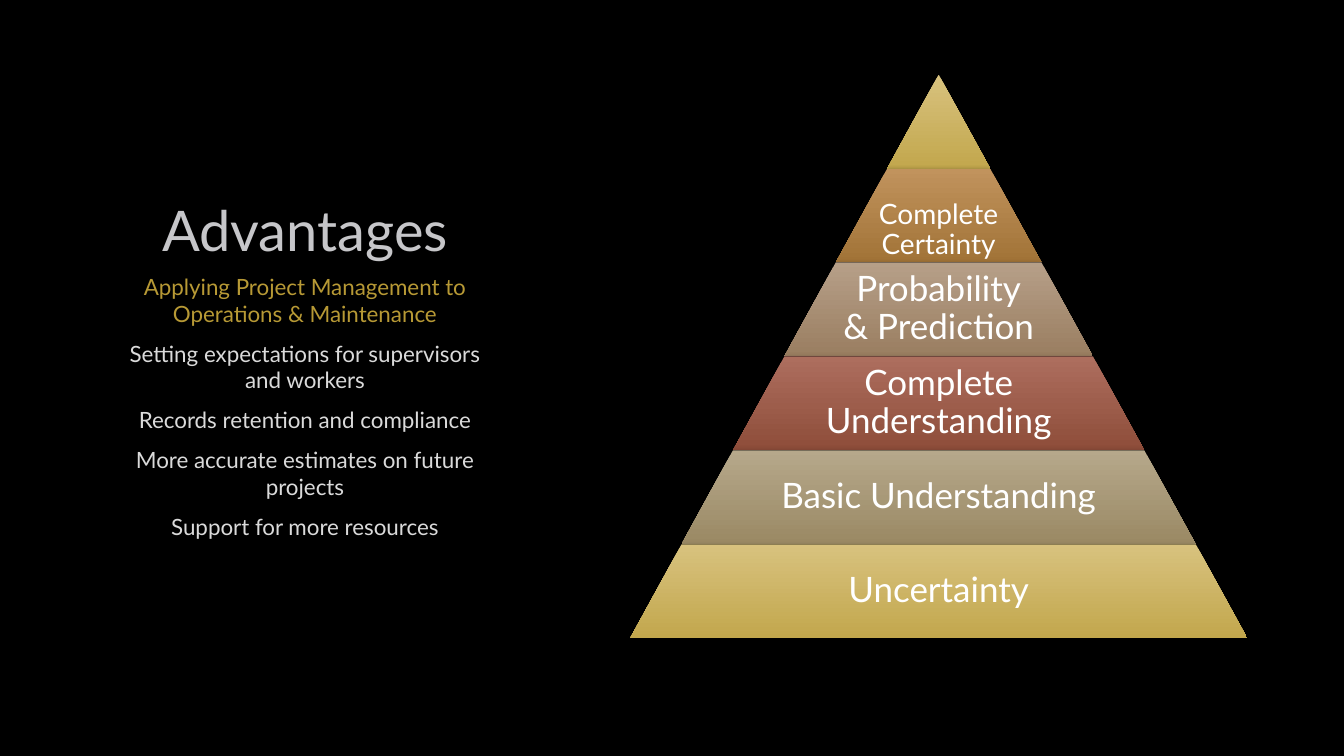
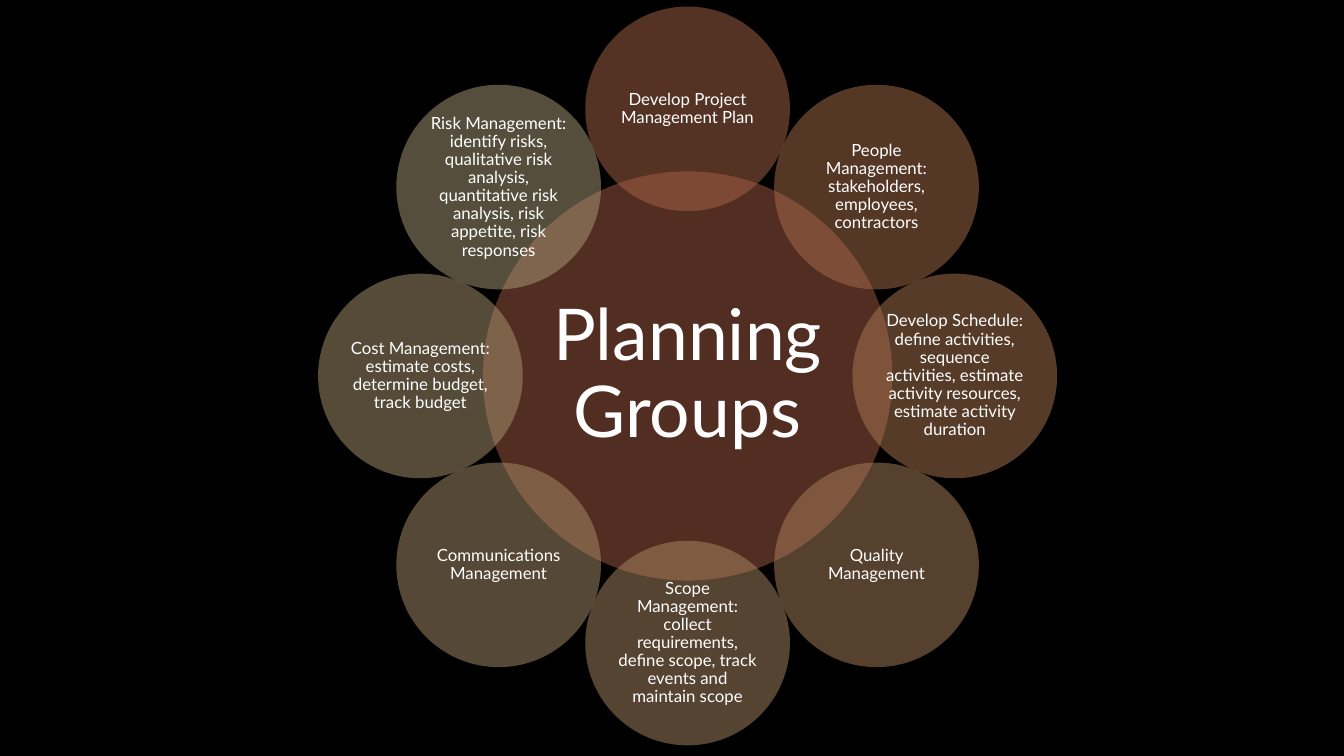
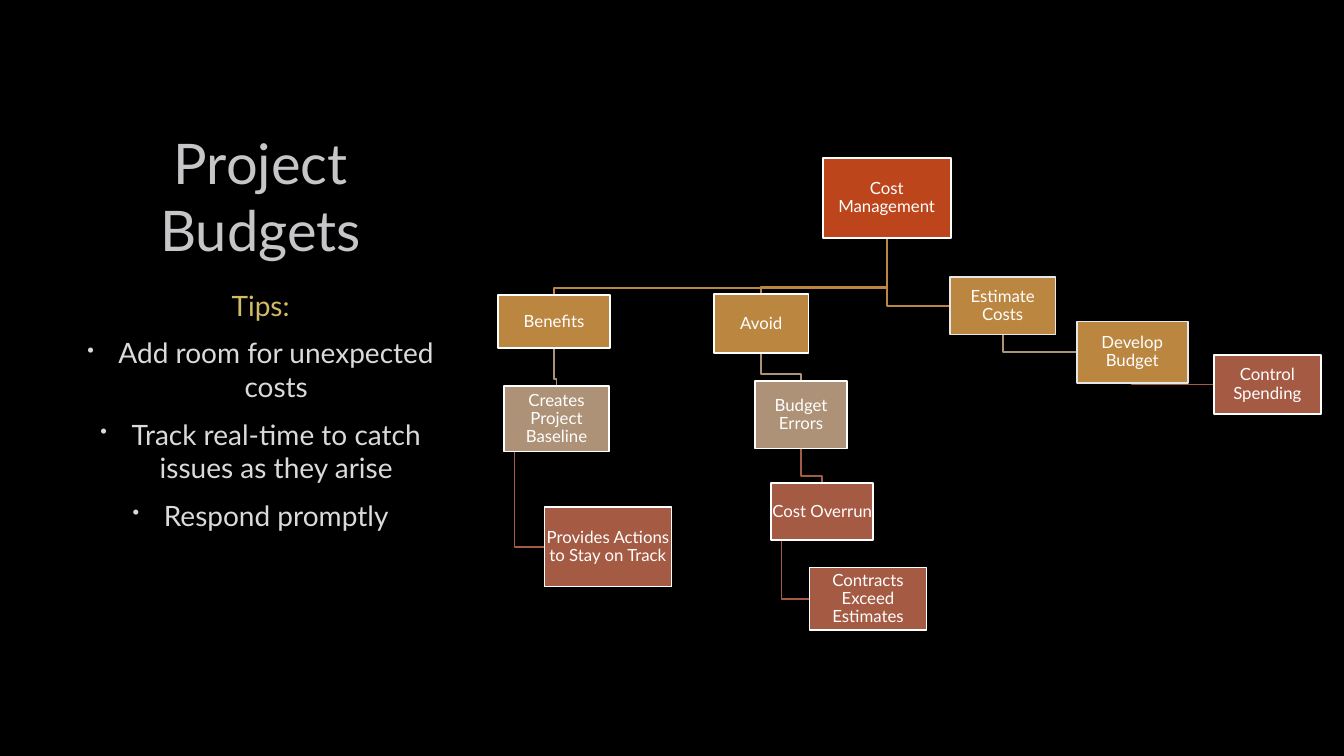
from dataclasses import dataclass
from math import cos, pi, sin

from lxml.etree import SubElement
from pptx import Presentation
from pptx.dml.color import RGBColor
from pptx.enum.shapes import MSO_SHAPE as SHAPE
from pptx.enum.text import MSO_ANCHOR as ANCHOR, MSO_AUTO_SIZE as AUTO, PP_ALIGN as ALIGN
from pptx.oxml.ns import qn
from pptx.util import Inches, Pt


@dataclass(frozen=True)
class Theme:
    font: str = "Lato"
    back: str = "000000"
    title: str = "C6C6C9"
    body: str = "DADADA"
    accent: str = "B79935"
    tips: str = "D3BA68"
    white: str = "FFFFFF"
    pale: str = "E7E7E7"
    root: str = "BC451B"
    amber: str = "BB8640"
    tan: str = "AD9277"
    rust: str = "A55A43"
    gold_fade: tuple = ("D8C27E", "C2A74D")
    amber_fade: tuple = ("C1935D", "A17337")
    tan_fade: tuple = ("B69F88", "9A7E61")
    rust_fade: tuple = ("AD6E5E", "8E4D3A")
    olive_fade: tuple = ("B6A88B", "9A8964")
    orbit: tuple = ("A86448", "AB6E4D", "AD7753", "AC815C",
                    "AC8964", "AC906C", "AD9773", "AD9D7B")
    title_size: int = 40
    hub_size: int = 51
    tier_size: int = 25
    body_size: int = 20
    small_body_size: int = 16
    label_size: int = 12
    line_width: float = 1.25


T = Theme()
TITLE_ONLY, BLANK = 5, 6


def rgb(value):
    return RGBColor.from_string(value)


def add_xml(parent, tag, **attrs):
    return SubElement(parent, qn(tag), {k: str(v) for k, v in attrs.items()})


class Deck:
    def __init__(self):
        self.prs = Presentation()
        self.prs.slide_width, self.prs.slide_height = Inches(13.33), Inches(7.5)
        fill = self.prs.slide_master.background.fill
        fill.solid()
        fill.fore_color.rgb = rgb(T.back)
        self.s = None

    def new_slide(self, layout):
        self.s = self.prs.slides.add_slide(self.prs.slide_layouts[layout])

    def style(self, p, size, color):
        p.alignment = ALIGN.CENTER
        for r in p.runs:
            r.font.name, r.font.size = T.font, Pt(size)
            r.font.color.rgb = rgb(color)

    def title(self, text, x):
        sp = self.s.shapes.title
        sp.left, sp.top, sp.width, sp.height = map(Inches, (x, 0.67, 4.05, 1.99))
        tf = sp.text_frame
        tf.text = text
        tf.auto_size, tf.vertical_anchor = AUTO.NONE, ANCHOR.BOTTOM
        self.style(tf.paragraphs[0], T.title_size, T.title)

    def body(self, x, y, heading, lines, size, heading_color, bullets=False):
        box = self.s.shapes.add_textbox(*map(Inches, (x, y, 4.05, 3.67)))
        tf = box.text_frame
        tf.word_wrap = True
        for i, text in enumerate([heading, *lines]):
            p = tf.add_paragraph() if i else tf.paragraphs[0]
            p.text = text
            p.space_before, p.space_after = Pt(size * 0.2), Pt(6)
            self.style(p, size, T.body if i else heading_color)
            if bullets and i:
                self.bullet(p)

    def bullet(self, p):
        pr = p._p.get_or_add_pPr()
        indent = Inches(0.31)
        pr.set("marL", str(indent))
        pr.set("indent", str(-indent))
        add_xml(add_xml(pr, "a:buClr"), "a:srgbClr", val=T.body)
        add_xml(pr, "a:buSzPct", val=70000)
        add_xml(pr, "a:buChar", char="•")

    def put_text(self, sp, text, size, inset):
        tf = sp.text_frame
        tf.word_wrap, tf.vertical_anchor = True, ANCHOR.MIDDLE
        tf.margin_left = tf.margin_right = Inches(inset)
        tf.margin_top = tf.margin_bottom = Inches(inset)
        p = tf.paragraphs[0]
        p.text = text
        p.line_spacing = 0.9
        self.style(p, size, T.white)

    def label(self, at, text, size):
        self.put_text(self.s.shapes.add_textbox(*map(Inches, at)), text, size, 0.03)

    def tier(self, at, fade):
        """Trapezoid with a vertical gradient and a soft shadow below."""
        sp = self.s.shapes.add_shape(SHAPE.TRAPEZOID, *map(Inches, at))
        sp.adjustments[0] = 0.547
        sp.line.fill.background()
        sp.fill.gradient()
        sp.fill.gradient_angle = 270
        for stop, color, position in zip(sp.fill.gradient_stops, fade, (0, 1)):
            stop.color.rgb, stop.position = rgb(color), position
        sp.shadow.inherit = False
        shadow = add_xml(sp.element.spPr.find(qn("a:effectLst")), "a:outerShdw",
                         blurRad=Pt(5), dist=Pt(2), dir=5400000, rotWithShape=0)
        add_xml(add_xml(shadow, "a:srgbClr", val="000000"), "a:alpha", val=60000)

    def solid(self, kind, at, color):
        sp = self.s.shapes.add_shape(kind, *map(Inches, at))
        sp.shadow.inherit = False
        sp.fill.solid()
        sp.fill.fore_color.rgb = rgb(color)
        return sp

    def circle(self, cx, cy, size, color, text, font_size, inset):
        """Half-transparent circle given by its centre and diameter."""
        sp = self.solid(SHAPE.OVAL, (cx - size / 2, cy - size / 2, size, size), color)
        sp.line.fill.background()
        add_xml(sp.element.spPr.find(qn("a:solidFill"))[0], "a:alpha", val=50000)
        self.put_text(sp, text, font_size, inset)

    def node(self, at, text, color, border):
        sp = self.solid(SHAPE.RECTANGLE, at, color)
        sp.line.color.rgb, sp.line.width = rgb(border), Pt(T.line_width)
        self.put_text(sp, text, T.label_size, 0)

    def link(self, parent, child, start, to_side, color):
        """Bent line from `start` (share of the parent's width) to the child's side or top."""
        left, top, width, height = parent
        x, y = left + start * width, top + height
        cx, cy, cw, ch = child
        if to_side:
            middle = cy + ch / 2
            points = [(x, middle), (cx, middle)]
        else:
            bend, centre = cy - 0.07, cx + cw / 2
            points = [(x, bend), (centre, bend), (centre, cy)]
        path = self.s.shapes.build_freeform(Inches(x), Inches(y))
        path.add_line_segments([(Inches(a), Inches(b)) for a, b in points], close=False)
        sp = path.convert_to_shape()
        sp.shadow.inherit = False
        sp.fill.background()
        sp.line.color.rgb, sp.line.width = rgb(color), Pt(T.line_width)


def advantages(deck):
    deck.new_slide(TITLE_ONLY)
    deck.title("Advantages", 1)
    deck.body(1, 2.66, "Applying Project Management to Operations & Maintenance",
              ["Setting expectations for supervisors and workers",
               "Records retention and compliance",
               "More accurate estimates on future projects",
               "Support for more resources"],
              T.small_body_size, T.accent)
    # text, gradient, type size, downward shift of the text
    tiers = [
        ("", T.gold_fade, T.tier_size, 0),
        ("Complete Certainty", T.amber_fade, 20, 0.15),
        ("Probability\v& Prediction", T.tan_fade, T.tier_size, 0),
        ("Complete Understanding", T.rust_fade, T.tier_size, 0),
        ("Basic Understanding", T.olive_fade, T.tier_size, 0),
        ("Uncertainty", T.gold_fade, T.tier_size, 0),
    ]
    centre, top, step, height = 9.31, 0.74, 1.02, 0.932
    for i, (text, fade, size, shift) in enumerate(tiers):
        width, y = step * (i + 1), top + height * i
        deck.tier((centre - width / 2, y, width, height), fade)
        if text:
            text_width = width * 0.65
            deck.label((centre - text_width / 2, y + shift, text_width, height), text, size)


def planning_groups(deck):
    deck.new_slide(BLANK)
    cx, cy, radius = 6.82, 3.73, 2.65
    deck.circle(cx, cy, 4.06, T.rust, "Planning Groups", T.hub_size, 0.07)
    groups = [
        "Develop Project Management Plan",
        "People Management: stakeholders, employees, contractors",
        "Develop Schedule: define activities, sequence activities, "
        "estimate activity resources, estimate activity duration",
        "Quality Management",
        "Scope Management: collect requirements, define scope, "
        "track events and maintain scope",
        "Communications Management",
        "Cost Management: estimate costs, determine budget, track budget",
        "Risk Management: identify risks, qualitative risk analysis, "
        "quantitative risk analysis, risk appetite, risk responses",
    ]
    for i, (text, color) in enumerate(zip(groups, T.orbit)):
        angle = 2 * pi * i / len(groups)
        deck.circle(cx + radius * sin(angle), cy - radius * cos(angle), 2.03,
                    color, text, T.label_size, 0.02)


def project_budgets(deck):
    deck.new_slide(TITLE_ONLY)
    deck.title("Project Budgets", 0.56)
    deck.body(0.56, 2.81, "Tips:",
              ["Add room for unexpected costs",
               "Track real-time to catch issues as they arise",
               "Respond promptly"],
              T.body_size, T.tips, bullets=True)
    root = (8.16, 1.57, 1.27, 0.79)
    benefits = (4.94, 2.93, 1.11, 0.52)
    baseline = (5, 3.83, 1.04, 0.65)
    actions = (5.4, 5.03, 1.26, 0.79)
    avoid = (7.08, 2.92, 0.94, 0.58)
    errors = (7.49, 3.78, 0.91, 0.67)
    overrun = (7.65, 4.79, 1.01, 0.57)
    contracts = (8.03, 5.63, 1.16, 0.62)
    estimate = (9.42, 2.75, 1.05, 0.57)
    budget = (10.68, 3.19, 1.1, 0.61)
    control = (12.04, 3.52, 1.06, 0.59)
    # parent, child, start along the parent, ends at the side, colour
    links = [
        (budget, control, 0.5, True, T.rust),
        (estimate, budget, 0.5, True, T.tan),
        (root, estimate, 0.5, True, T.amber),
        (overrun, contracts, 0.1, True, T.rust),
        (errors, overrun, 0.5, False, T.rust),
        (avoid, errors, 0.5, False, T.tan),
        (root, avoid, 0.5, False, T.amber),
        (baseline, actions, 0.1, True, T.rust),
        (benefits, baseline, 0.5, False, T.tan),
        (root, benefits, 0.5, False, T.amber),
    ]
    for link in links:
        deck.link(*link)
    nodes = [
        (root, "Cost Management", T.root, T.white),
        (benefits, "Benefits", T.amber, T.white),
        (baseline, "Creates Project Baseline", T.tan, T.white),
        (actions, "Provides Actions to Stay on Track", T.rust, T.white),
        (avoid, "Avoid", T.amber, T.white),
        (errors, "Budget Errors", T.tan, T.white),
        (overrun, "Cost Overrun", T.rust, T.white),
        (contracts, "Contracts Exceed Estimates", T.rust, T.white),
        (estimate, "Estimate Costs", T.amber, T.pale),
        (budget, "Develop Budget", T.amber, T.pale),
        (control, "Control Spending", T.rust, T.white),
    ]
    for node in nodes:
        deck.node(*node)


def main():
    deck = Deck()
    for build in (advantages, planning_groups, project_budgets):
        build(deck)
    deck.prs.save("out.pptx")


if __name__ == "__main__":
    main()
